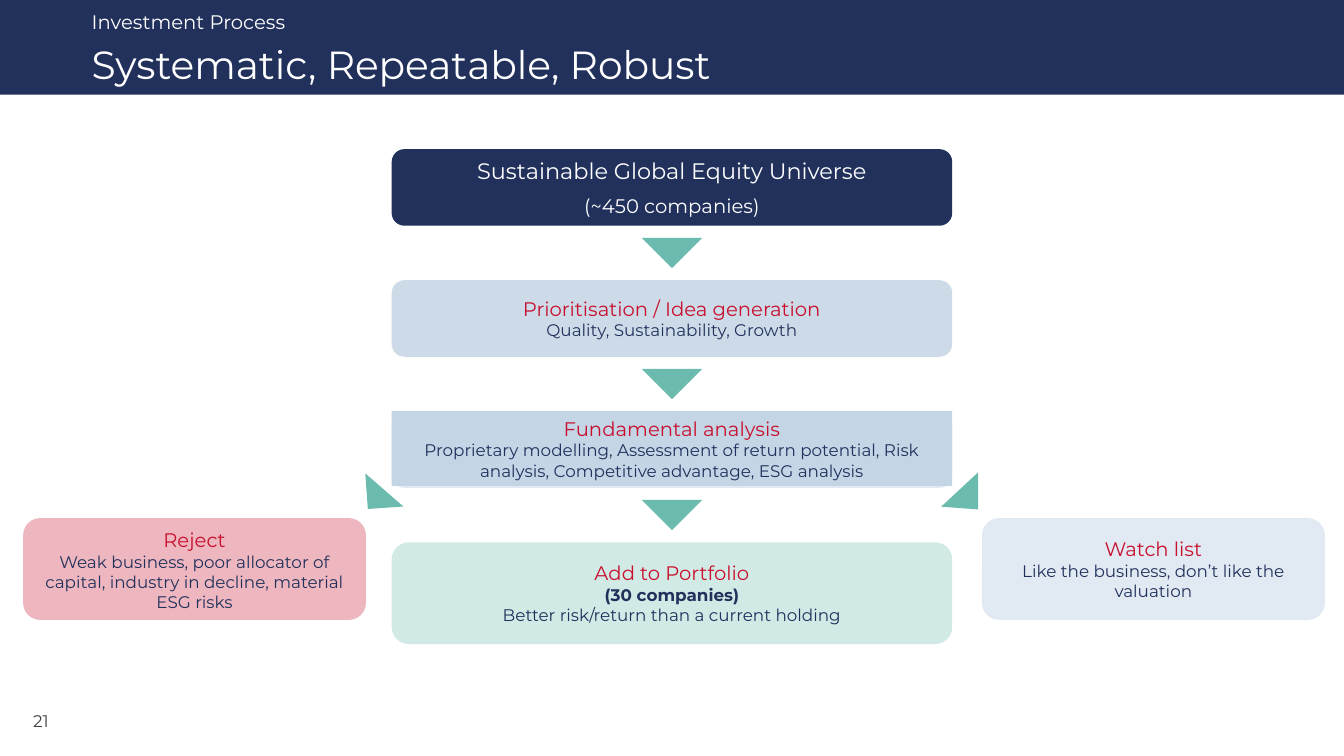
from lxml import etree
from pptx import Presentation
from pptx.dml.color import RGBColor
from pptx.enum.shapes import MSO_SHAPE
from pptx.enum.text import MSO_ANCHOR, PP_ALIGN
from pptx.oxml.ns import qn
from pptx.util import Inches, Pt

RECTANGLE = MSO_SHAPE.RECTANGLE
ROUNDED = MSO_SHAPE.ROUNDED_RECTANGLE
TRIANGLE = MSO_SHAPE.ISOSCELES_TRIANGLE
TOP, MIDDLE, BOTTOM = MSO_ANCHOR.TOP, MSO_ANCHOR.MIDDLE, MSO_ANCHOR.BOTTOM
LEFT, CENTER = PP_ALIGN.LEFT, PP_ALIGN.CENTER

NAVY = RGBColor(0x21, 0x31, 0x5C)
WHITE = RGBColor(0xFF, 0xFF, 0xFF)
RED = RGBColor(0xC8, 0x10, 0x2E)
TEAL = RGBColor(0x6B, 0xBB, 0xAE)
BLUE = RGBColor(0x5C, 0x8B, 0xB9)
PALE_BLUE = RGBColor(0x9D, 0xB9, 0xD5)
STEEL = RGBColor(0xC4, 0xD5, 0xE6)
GREY = RGBColor(0x41, 0x41, 0x41)

FONT = "Montserrat"
PAGE_WIDTH, PAGE_HEIGHT = 13.33, 7.5
CARD_WIDTH, CARD_HEIGHT = 5.56, 0.76
OUTCOME_HEIGHT = 1.01
ROW_STEP = 1.3
ARROW_WIDTH, ARROW_HEIGHT = 0.6, 0.3


def add_panel(page, kind, box, color, opacity=100, rotation=0):
    panel = page.shapes.add_shape(kind, *map(Inches, box))
    panel.shadow.inherit = False
    panel.line.fill.background()
    panel.fill.solid()
    panel.fill.fore_color.rgb = color
    panel.rotation = rotation
    if opacity < 100:
        fill_color = panel.fill._xPr.find(qn("a:solidFill"))[0]
        etree.SubElement(fill_color, qn("a:alpha"), val=str(opacity * 1000))
    return panel


def write_lines(shape, lines, align=CENTER, anchor=MIDDLE, gap=0):
    """Fill a shape with (text, size, color, bold) lines, gap points apart."""
    frame = shape.text_frame
    frame.word_wrap = True
    frame.vertical_anchor = anchor
    for index, (text, size, color, bold) in enumerate(lines):
        para = frame.add_paragraph() if index else frame.paragraphs[0]
        para.alignment = align
        if index and gap:
            para.space_before = Pt(gap)
        span = para.add_run()
        span.text = text
        span.font.name = FONT
        span.font.size = Pt(size)
        span.font.bold = bold
        span.font.color.rgb = color


def add_label(page, box, text, size, color, anchor=TOP, inset=True):
    label = page.shapes.add_textbox(*map(Inches, box))
    if not inset:
        frame = label.text_frame
        frame.margin_left = frame.margin_right = 0
        frame.margin_top = frame.margin_bottom = 0
    write_lines(label, [(text, size, color, False)], LEFT, anchor)


def stage_lines(heading, *details):
    return [(heading, 14, RED, False)] + [(text, 12, NAVY, bold) for text, bold in details]


def draw_header(page, left, top, width, height):
    add_panel(page, RECTANGLE, (left, top, width, height), NAVY)
    text_left, text_width = left + 0.91, width - 1.57
    add_label(page, (text_left, top + 0.09, text_width, 0.24),
              "Investment Process", 14, WHITE, BOTTOM, inset=False)
    add_label(page, (text_left, top + 0.33, text_width, 0.61),
              "Systematic, Repeatable, Robust", 28, WHITE, MIDDLE, inset=False)


def draw_funnel(page, left, top, width):
    """Stack the four stages, with a downward arrow between each pair."""
    rows = [top + ROW_STEP * row for row in range(4)]

    universe = add_panel(page, ROUNDED, (left, rows[0], width, CARD_HEIGHT), NAVY)
    write_lines(universe, [("Sustainable Global Equity Universe", 16, WHITE, False),
                           ("(~450 companies)", 14, WHITE, False)], gap=7)

    ideas = add_panel(page, ROUNDED, (left, rows[1], width, CARD_HEIGHT), BLUE, 30)
    write_lines(ideas, stage_lines("Prioritisation / Idea generation",
                                   ("Quality, Sustainability, Growth", False)))

    add_panel(page, ROUNDED, (left, rows[2], width, CARD_HEIGHT), PALE_BLUE, 30)
    analysis = add_panel(page, RECTANGLE, (left, rows[2], width, CARD_HEIGHT - 0.02), STEEL)
    write_lines(analysis, stage_lines(
        "Fundamental analysis",
        ("Proprietary modelling, Assessment of return potential, Risk analysis, "
         "Competitive advantage, ESG analysis", False)))

    portfolio = add_panel(page, ROUNDED, (left, rows[3], width, OUTCOME_HEIGHT), TEAL, 30)
    write_lines(portfolio, stage_lines(
        "Add to Portfolio", ("(30 companies)", True),
        ("Better risk/return than a current holding", False)))

    arrow_left = left + (width - ARROW_WIDTH) / 2
    for row_top in rows[:3]:
        arrow_top = row_top + (ROW_STEP + CARD_HEIGHT - ARROW_HEIGHT) / 2
        add_panel(page, TRIANGLE, (arrow_left, arrow_top, ARROW_WIDTH, ARROW_HEIGHT),
                  TEAL, rotation=180)


def draw_side_outcome(page, box, color, lines, anchor, arrow_box, rotation):
    add_panel(page, TRIANGLE, arrow_box, TEAL, rotation=rotation)
    write_lines(add_panel(page, ROUNDED, box, color, 30), lines, anchor=anchor)


def main():
    deck = Presentation()
    deck.slide_width, deck.slide_height = Inches(PAGE_WIDTH), Inches(PAGE_HEIGHT)
    page = deck.slides.add_slide(deck.slide_layouts[6])

    draw_header(page, 0, 0, PAGE_WIDTH, 0.94)
    draw_funnel(page, (PAGE_WIDTH - CARD_WIDTH) / 2, 1.48, CARD_WIDTH)
    draw_side_outcome(
        page, (0.23, 5.14, 3.4, OUTCOME_HEIGHT), RED,
        stage_lines("Reject", ("Weak business, poor allocator of capital, "
                               "industry in decline, material ESG risks", False)),
        TOP, (3.48, 4.83, 0.5, 0.25), 221)
    draw_side_outcome(
        page, (9.74, 5.14, 3.4, OUTCOME_HEIGHT), PALE_BLUE,
        stage_lines("Watch list", ("Like the business, don’t like the valuation", False)),
        MIDDLE, (9.36, 4.82, 0.5, 0.27), 137.1)
    add_label(page, (0.23, 7, 0.66, 0.4), "21", 12, GREY)

    deck.save("out.pptx")


if __name__ == "__main__":
    main()
